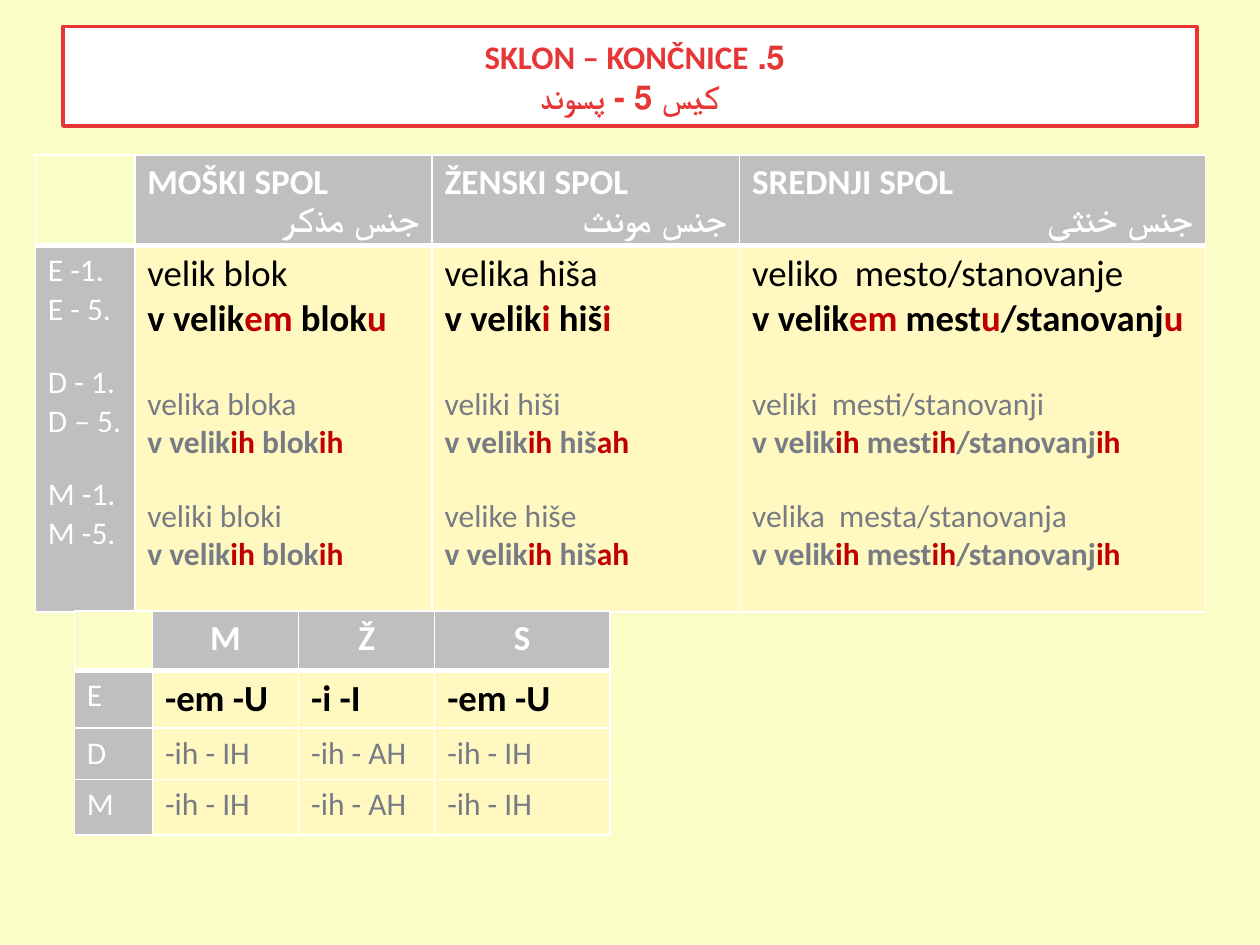
from dataclasses import dataclass

from lxml import etree
from pptx import Presentation
from pptx import util as u
from pptx.dml import color as clr
from pptx.enum import shapes, text
from pptx.oxml import ns


@dataclass(frozen=True)
class Theme:
    back: str = "FAFEC6"
    white: str = "FFFFFF"
    black: str = "000000"
    gray: str = "BFBFBF"
    cream: str = "FFF8C1"
    dim: str = "777C84"
    mark: str = "C00000"
    title: str = "E63636"
    font: str = "Calibri"
    head: float = 20
    lead: float = 21
    body: float = 18
    top: float = 18.8
    thin: float = 0.96
    thick: float = 3


T = Theme()
HEAD = dict(size=T.head, color=T.white, bold=True)
LABEL = dict(size=T.body, color=T.white, bold=False)
LEAD = dict(size=T.lead, color=T.black, bold=False)
DIM = dict(size=T.body, color=T.dim, bold=False)
TITLE = dict(size=T.top, color=T.title, bold=True)


def rgb(code):
    return clr.RGBColor.from_string(code)


def paint(item, code):
    item.fill.solid()
    item.fill.fore_color.rgb = rgb(code)


class Deck:
    def __init__(self, theme):
        self.theme = theme
        self.prs = Presentation()
        self.prs.slide_width = u.Inches(10)
        self.prs.slide_height = u.Inches(7.5)
        self.slide = self.prs.slides.add_slide(self.prs.slide_layouts[6])
        paint(self.slide.background, theme.back)

    def line(self, par, words, style, align=None, rtl=False, before=0):
        par.alignment = align
        par.space_before = u.Pt(before)
        if rtl:
            par._p.get_or_add_pPr().set("rtl", "1")
        for i, part in enumerate(words.split("*")):
            if not part:
                continue
            for j, piece in enumerate(part.split("\n")):
                if j:
                    par.add_line_break()
                run = par.add_run()
                run.text = piece
                look = dict(name=self.theme.font, size=u.Pt(style["size"]), bold=style["bold"])
                for key, val in look.items():
                    setattr(run.font, key, val)
                run.font.color.rgb = rgb(self.theme.mark if i % 2 else style["color"])

    def box(self, words, spot, style):
        rect = self.slide.shapes.add_shape(
            shapes.MSO_SHAPE.RECTANGLE, *map(u.Inches, spot))
        rect.shadow.inherit = False
        paint(rect, self.theme.white)
        rect.line.color.rgb = rgb(style["color"])
        rect.line.width = u.Pt(2)
        rect.text_frame.word_wrap = True
        rect.text_frame.vertical_anchor = text.MSO_ANCHOR.MIDDLE
        self.line(rect.text_frame.paragraphs[0], words, style, text.PP_ALIGN.CENTER, True)

    def edge(self, cell, row):
        props = cell._tc.get_or_add_tcPr()
        for side in "LRTB":
            wide = (row, side) in ((0, "B"), (1, "T"))
            width = self.theme.thick if wide else self.theme.thin
            ln = etree.SubElement(props, ns.qn("a:ln" + side), w=str(u.Pt(width)))
            fill = etree.SubElement(ln, ns.qn("a:solidFill"))
            etree.SubElement(fill, ns.qn("a:srgbClr"), val=self.theme.white)

    def grid(self, left, top, cols, rows, cells):
        spot = (left, top, sum(cols), sum(rows))
        table = self.slide.shapes.add_table(
            len(rows), len(cols), *map(u.Inches, spot)).table
        for col, width in zip(table.columns, cols):
            col.width = u.Inches(width)
        for row, height in zip(table.rows, rows):
            row.height = u.Inches(height)
        for r, line in enumerate(cells):
            for c, pars in enumerate(line):
                cell = table.cell(r, c)
                self.edge(cell, r)
                if r == c == 0:
                    paint(cell, self.theme.back)
                else:
                    paint(cell, self.theme.cream if r and c else self.theme.gray)
                for i, par in enumerate(pars):
                    frame = cell.text_frame
                    self.line(frame.add_paragraph() if i else frame.paragraphs[0], **par)


def head(name, local):
    return [dict(words=name, style=HEAD),
            dict(words=local, style=HEAD, align=text.PP_ALIGN.RIGHT, rtl=True)]


def pairs(groups, first, rest, strong, gaps):
    pars = []
    for (one, five), style, gap in zip(groups, (first, rest, rest), gaps):
        pars.append(dict(words=one, style=style, before=gap))
        pars.append(dict(words=five, style=dict(style, bold=strong)))
    return pars


def main():
    deck = Deck(T)
    labels = [("E -1.", "E - 5."), ("D - 1.", "D – 5."), ("M -1.", "M -5.")]
    forms = [
        [("velik blok", "v velik*em* blok*u*"),
         ("velika bloka", "v velik*ih* blok*ih*"),
         ("veliki bloki", "v velik*ih* blok*ih*")],
        [("velika hiša", "v velik*i* hiš*i*"),
         ("veliki hiši", "v velik*ih* hiš*ah*"),
         ("velike hiše", "v velik*ih* hiš*ah*")],
        [("veliko  mesto/stanovanje", "v velik*em* mest*u*/stanovanj*u*"),
         ("veliki  mesti/stanovanji", "v velik*ih* mest*ih*/stanovanj*ih*"),
         ("velika  mesta/stanovanja", "v velik*ih* mest*ih*/stanovanj*ih*")],
    ]
    names = [("MOŠKI SPOL", "جنس مذکر"), ("ŽENSKI SPOL", "جنس مونث"),
             ("SREDNJI SPOL", "جنس خنثی")]
    deck.grid(0.28, 1.23, (0.79, 2.36, 2.44, 3.7), (0.71, 2.91), [
        [[]] + [head(*pair) for pair in names],
        [pairs(labels, LABEL, LABEL, False, (0, 20, 20))]
        + [pairs(form, LEAD, DIM, True, (0, 25, 20)) for form in forms],
    ])

    ends = [("E", "-em -U", "-i -I", "-em -U"),
            ("D", "-ih - IH", "-ih - AH", "-ih - IH"),
            ("M", "-ih - IH", "-ih - AH", "-ih - IH")]
    cells = [[[]] + [[dict(words=w, style=HEAD, align=text.PP_ALIGN.CENTER)] for w in "MŽS"]]
    for (name, *words), style in zip(ends, (dict(LEAD, bold=True), DIM, DIM)):
        cells.append([[dict(words=name, style=LABEL)]]
                     + [[dict(words=w, style=style)] for w in words])
    deck.grid(0.59, 4.85, (0.62, 1.16, 1.08, 1.39), (0.47, 0.45, 0.41, 0.44), cells)

    deck.box("5. SKLON – KONČNICE \nکیس 5 - پسوند", (0.5, 0.21, 9, 0.79), TITLE)
    deck.prs.save("out.pptx")


if __name__ == "__main__":
    main()
